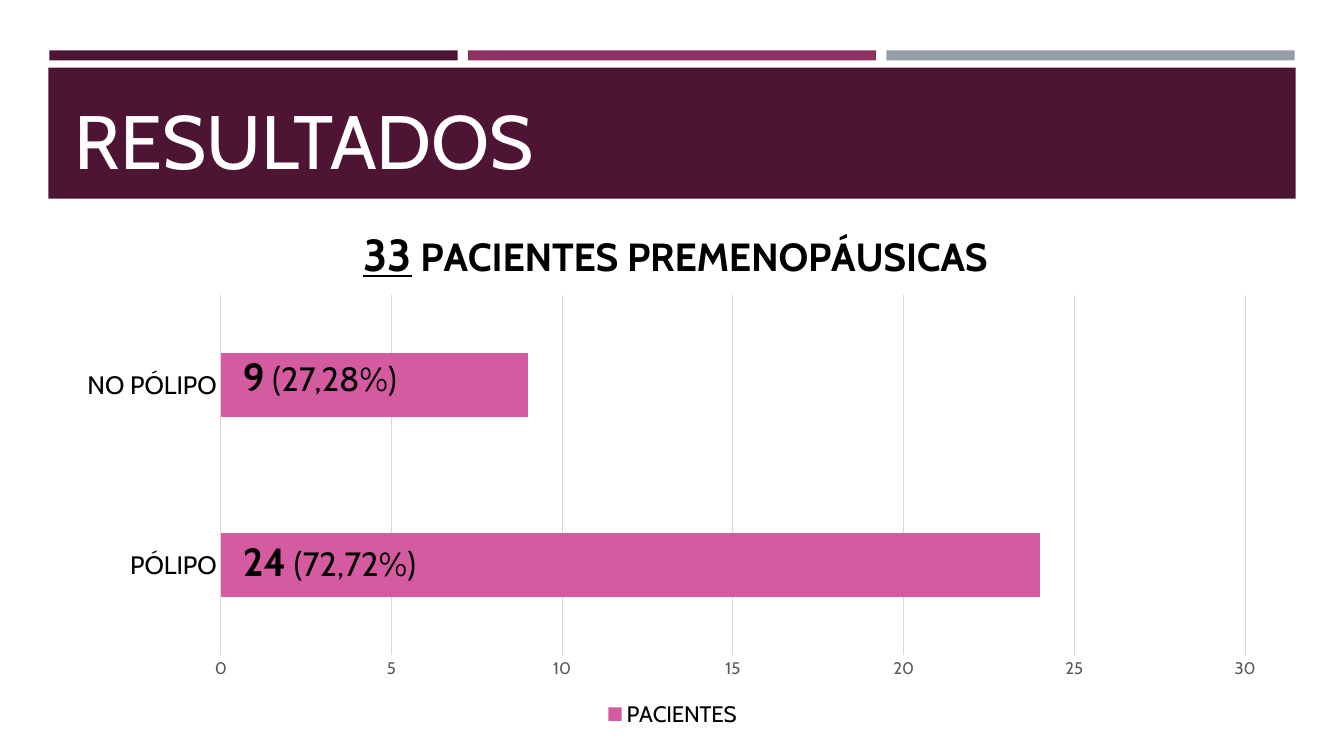
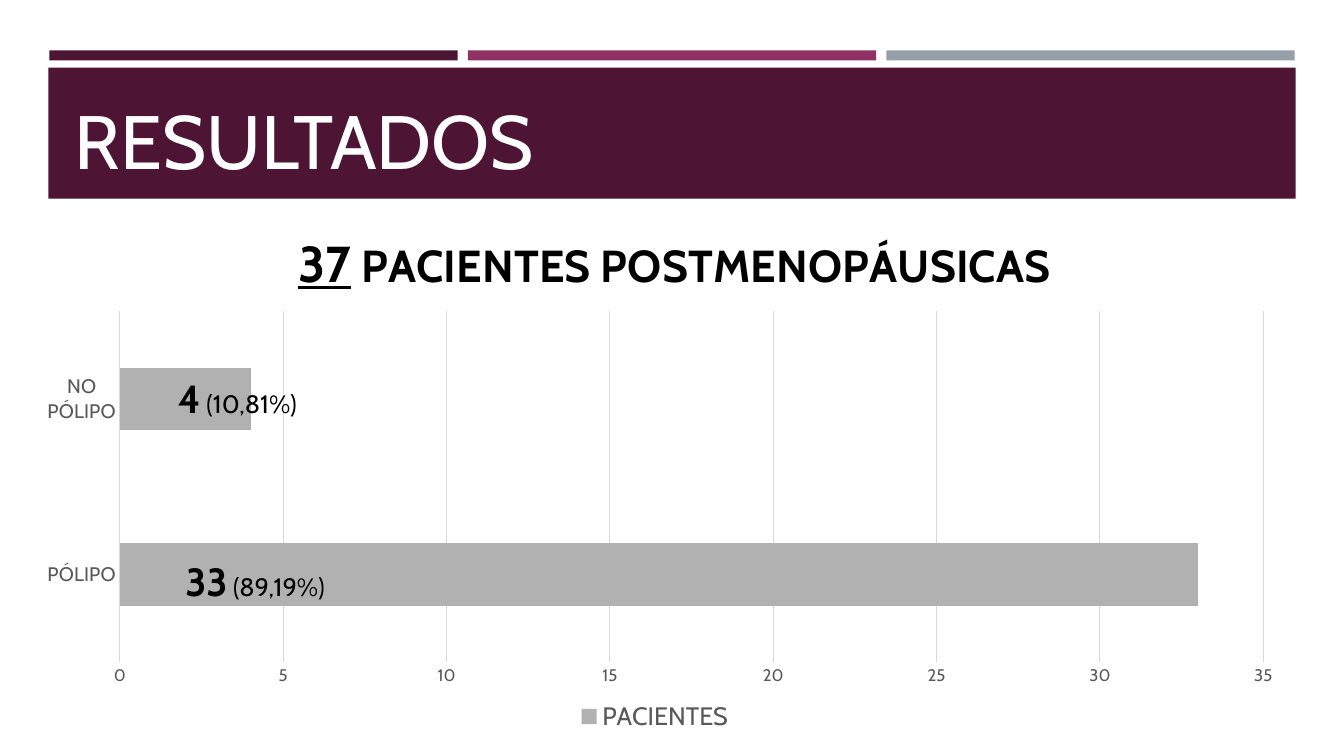
from pptx import Presentation
from pptx.chart.data import CategoryChartData
from pptx.dml.color import RGBColor
from pptx.enum.chart import XL_CHART_TYPE, XL_LEGEND_POSITION, XL_TICK_MARK
from pptx.enum.shapes import MSO_SHAPE
from pptx.enum.text import MSO_ANCHOR, MSO_AUTO_SIZE, PP_ALIGN
from pptx.oxml import parse_xml
from pptx.oxml.ns import nsdecls
from pptx.util import Inches, Pt

# Shared style
FONT = "Cabin"
PLUM, MAGENTA, STEEL = "4D1434", "903163", "969FA7"
BLACK, OFF_WHITE, GREY, LIGHT_GREY = "000000", "FFFEFF", "595959", "D9D9D9"
STRIP_LEFT, STRIP_STEP, STRIP_WIDTH = 0.49, 4.15, 4.05
TITLE_ONLY = 5

# Positions in inches: frame and plot are left, top, width, height
SLIDES = [
    dict(
        heading=("33", " PACIENTES PREMENOPÁUSICAS"), heading_sizes=(32, 28),
        heading_at=(3.57, 2.22), frame=(0.64, 2.02, 12.06, 5.24),
        plot=(2.19, 2.93, 10.16, 3.57), values=(24, 9), maximum=30,
        bar_color="D45B9F", category_font=(18, BLACK), legend_font=(16, BLACK),
        share_size=24,
        labels=[
            ((2.31, 5.28, 2.1, 0.57), "24", " (72,72%)", PP_ALIGN.LEFT),
            ((2.31, 3.45, 3.1, 0.57), "9", " (27,28%)", PP_ALIGN.LEFT),
        ],
    ),
    dict(
        heading=("37", " PACIENTES POSTMENOPÁUSICAS"), heading_sizes=(36, 32),
        heading_at=(2.93, 2.27), frame=(0.29, 2.14, 12.41, 5.17),
        plot=(1.19, 3.09, 11.34, 3.48), values=(33, 4), maximum=35,
        bar_color="B1B1B1", category_font=(14, GREY), legend_font=(18, GREY),
        share_size=18,
        labels=[
            ((1.74, 5.48, 2.01, 0.54), "33", " (89,19%)", PP_ALIGN.LEFT),
            ((1.43, 3.66, 1.85, 0.54), "4", " (10,81%)", PP_ALIGN.CENTER),
        ],
    ),
]


def rgb(color):
    return RGBColor.from_string(color)


def inches(lengths):
    return [Inches(length) for length in lengths]


def style_font(font, size, color, bold=False):
    font.name, font.size, font.bold = FONT, Pt(size), bold
    font.color.rgb = rgb(color)


def add_count(para, texts, sizes, bolds, underline=False):
    """Write a bold count followed by its description."""
    for text, size, bold in zip(texts, sizes, bolds):
        span = para.add_run()
        span.text = text
        style_font(span.font, size, BLACK, bold)
    if underline:
        para.runs[0].font.underline = True


def add_band(slide, frame, color):
    band = slide.shapes.add_shape(MSO_SHAPE.RECTANGLE, *inches(frame))
    band.shadow.inherit = False
    band.fill.solid()
    band.fill.fore_color.rgb = rgb(color)
    band.line.fill.background()


def add_header(slide, text):
    for index, color in enumerate((PLUM, MAGENTA, STEEL)):
        left = STRIP_LEFT + index * STRIP_STEP
        add_band(slide, (left, 0.5, STRIP_WIDTH, 0.1), color)
    add_band(slide, (0.48, 0.67, 12.37, 1.3), PLUM)

    title = slide.shapes.title
    title.left, title.top, title.width, title.height = inches((0.64, 0.77, 12.06, 1.11))
    frame = title.text_frame
    frame.text = text
    frame.auto_size = MSO_AUTO_SIZE.NONE
    frame.vertical_anchor = MSO_ANCHOR.BOTTOM
    para = frame.paragraphs[0]
    para.alignment = PP_ALIGN.LEFT
    style_font(para.runs[0].font, 54, OFF_WHITE)
    # Bring the title in front of its band
    slide.shapes._spTree.append(title._element)


def place_in_chart(parent, frame, position, target=""):
    """Fix a chart part at a slide position; the size is optional."""
    left, top, width, height = frame
    fractions = [(position[0] - left) / width, (position[1] - top) / height]
    if len(position) == 4:
        fractions += [position[2] / width, position[3] / height]
    modes = '<c:xMode val="edge"/><c:yMode val="edge"/>'
    sizes = "".join(f'<c:{name} val="{value:.4f}"/>' for name, value in zip("xywh", fractions))
    for old in parent.findall("{*}layout"):
        parent.remove(old)
    layout = parse_xml(
        f'<c:layout {nsdecls("c")}><c:manualLayout>{target}{modes}{sizes}'
        "</c:manualLayout></c:layout>"
    )
    text = parent.find("{*}tx")
    parent.insert(0 if text is None else parent.index(text) + 1, layout)


def style_axes(chart, maximum, category_font):
    category, value = chart.category_axis, chart.value_axis
    for axis, font in ((category, category_font), (value, (12, GREY))):
        axis.major_tick_mark = axis.minor_tick_mark = XL_TICK_MARK.NONE
        style_font(axis.tick_labels.font, *font)
    category.has_major_gridlines = False
    value.has_major_gridlines = True
    for line in (category.format.line, value.major_gridlines.format.line):
        line.color.rgb = rgb(LIGHT_GREY)
        line.width = Pt(0.75)
    value.format.line.fill.background()
    value.minimum_scale, value.maximum_scale, value.major_unit = 0, maximum, 5


def add_patient_chart(slide, content):
    data = CategoryChartData()
    data.categories = ["PÓLIPO", "NO PÓLIPO"]
    data.add_series("PACIENTES", content["values"])
    frame = content["frame"]
    chart = slide.shapes.add_chart(XL_CHART_TYPE.BAR_CLUSTERED, *inches(frame), data).chart
    style_font(chart.font, 10, BLACK)

    # Heading
    chart.has_title = True
    heading = chart.chart_title
    add_count(heading.text_frame.paragraphs[0], content["heading"],
              content["heading_sizes"], (True, True), underline=True)
    heading.include_in_layout = False
    place_in_chart(heading._element, frame, content["heading_at"])

    # Bars and axes
    plot = chart.plots[0]
    plot.gap_width = 182
    plot.vary_by_categories = False
    fill = plot.series[0].format.fill
    fill.solid()
    fill.fore_color.rgb = rgb(content["bar_color"])
    style_axes(chart, content["maximum"], content["category_font"])
    place_in_chart(chart._chartSpace.chart.plotArea, frame, content["plot"],
                   '<c:layoutTarget val="inner"/>')

    # Legend
    chart.has_legend = True
    chart.legend.position = XL_LEGEND_POSITION.BOTTOM
    chart.legend.include_in_layout = False
    style_font(chart.legend.font, *content["legend_font"])


def add_bar_label(slide, frame, count, share, alignment, share_size):
    box = slide.shapes.add_textbox(*inches(frame))
    box.text_frame.word_wrap = True
    para = box.text_frame.paragraphs[0]
    para.alignment = alignment
    add_count(para, (count, share), (28, share_size), (True, False))


def main():
    deck = Presentation()
    deck.slide_width, deck.slide_height = inches((13.33, 7.5))
    for content in SLIDES:
        slide = deck.slides.add_slide(deck.slide_layouts[TITLE_ONLY])
        add_header(slide, "RESULTADOS")
        add_patient_chart(slide, content)
        for label in content["labels"]:
            add_bar_label(slide, *label, content["share_size"])
    deck.save("out.pptx")


if __name__ == "__main__":
    main()
